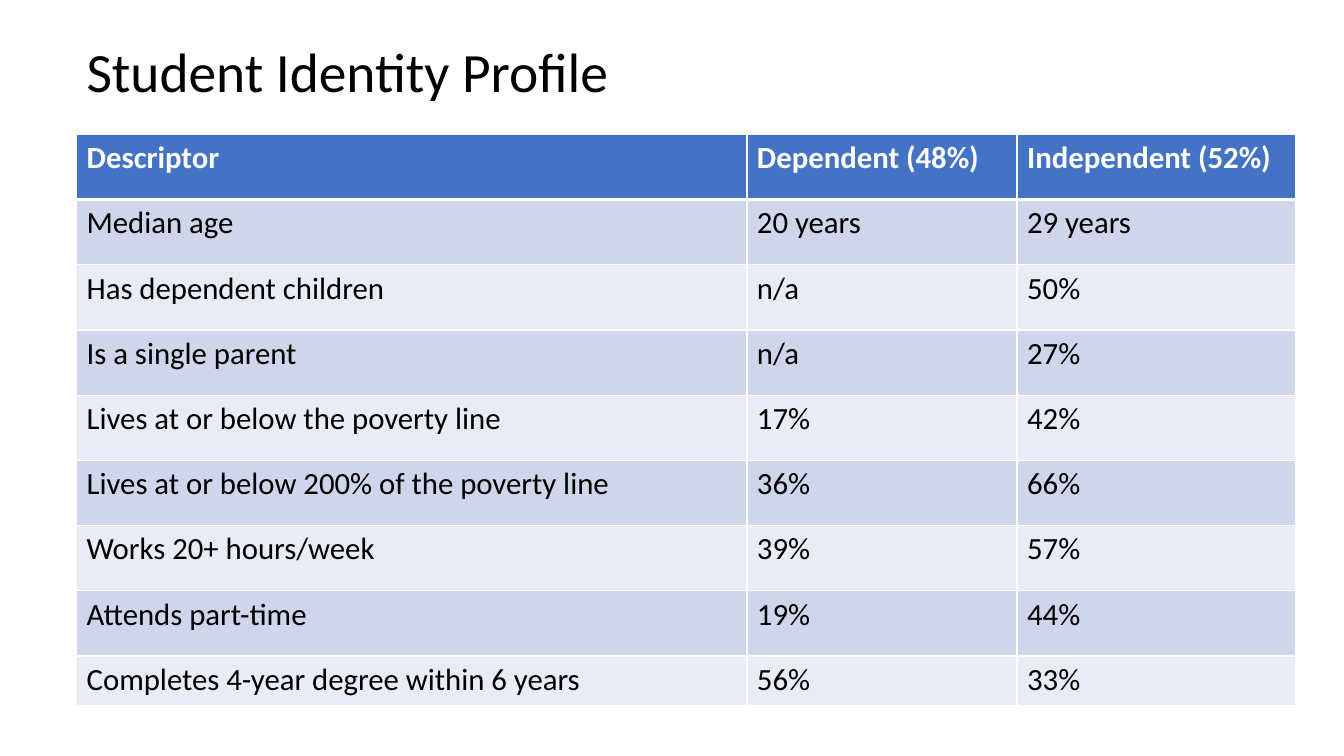
from lxml import etree
from pptx import Presentation
from pptx.dml.color import RGBColor
from pptx.enum import text
from pptx.oxml import ns
from pptx.util import Pt

WHITE = RGBColor(0xFF, 0xFF, 0xFF)
BLACK = RGBColor(0x00, 0x00, 0x00)
BLUE = RGBColor(0x44, 0x72, 0xC4)
BANDS = (RGBColor(0xCF, 0xD5, 0xEA), RGBColor(0xE9, 0xEB, 0xF5))

PROFILE = (
    ("Descriptor", "Dependent (48%)", "Independent (52%)"),
    ("Median age", "20 years", "29 years"),
    ("Has dependent children", "n/a", "50%"),
    ("Is a single parent", "n/a", "27%"),
    ("Lives at or below the poverty line", "17%", "42%"),
    ("Lives at or below 200% of the poverty line", "36%", "66%"),
    ("Works 20+ hours/week", "39%", "57%"),
    ("Attends part-time", "19%", "44%"),
    ("Completes 4-year degree within 6 years", "56%", "33%"),
)
COLUMN_WIDTHS = (478.8, 193, 198.7)
ROW_HEIGHTS = (46.6,) * 8 + (35.2,)


class Deck:
    font = "Calibri"
    title_size = 39.6
    table_size = 22

    def __init__(self, width, height):
        self.prs = Presentation()
        self.prs.slide_width, self.prs.slide_height = Pt(width), Pt(height)
        self.s = self.prs.slides.add_slide(self.prs.slide_layouts[6])

    def set_text(self, p, words, size, color, bold=False):
        p.text = words
        p.font.name, p.font.size, p.font.bold = self.font, Pt(size), bold
        p.font.color.rgb = color

    def title(self, words, *box):
        tf = self.s.shapes.add_textbox(*map(Pt, box)).text_frame
        tf.word_wrap = True
        tf.vertical_anchor = text.MSO_ANCHOR.MIDDLE
        p = tf.paragraphs[0]
        p.line_spacing = 0.9
        self.set_text(p, words, self.title_size, BLACK)

    def border(self, cell, side, width):
        ln = etree.SubElement(cell._tc.get_or_add_tcPr(), ns.qn(f"a:ln{side}"), w=str(Pt(width)))
        fill = etree.SubElement(ln, ns.qn("a:solidFill"))
        etree.SubElement(fill, ns.qn("a:srgbClr"), val=str(WHITE))

    def table(self, rows, left, top, widths, heights):
        size = (Pt(n) for n in (left, top, sum(widths), sum(heights)))
        table = self.s.shapes.add_table(len(rows), len(widths), *size).table
        for column, width in zip(table.columns, widths):
            column.width = Pt(width)
        for i, (row, height, values) in enumerate(zip(table.rows, heights, rows)):
            row.height = Pt(height)
            header = i == 0
            for cell, value in zip(row.cells, values):
                for side in "LRTB":
                    thick = (header and side == "B") or (i == 1 and side == "T")
                    self.border(cell, side, 3 if thick else 1)
                cell.fill.solid()
                cell.fill.fore_color.rgb = BLUE if header else BANDS[(i - 1) % 2]
                self.set_text(cell.text_frame.paragraphs[0], value, self.table_size,
                              WHITE if header else BLACK, header)


def main():
    deck = Deck(960, 540)
    deck.title("Student Identity Profile", 54.7, 28, 813, 51)
    deck.table(PROFILE, 54.7, 96, COLUMN_WIDTHS, ROW_HEIGHTS)
    deck.prs.save("out.pptx")


if __name__ == "__main__":
    main()
